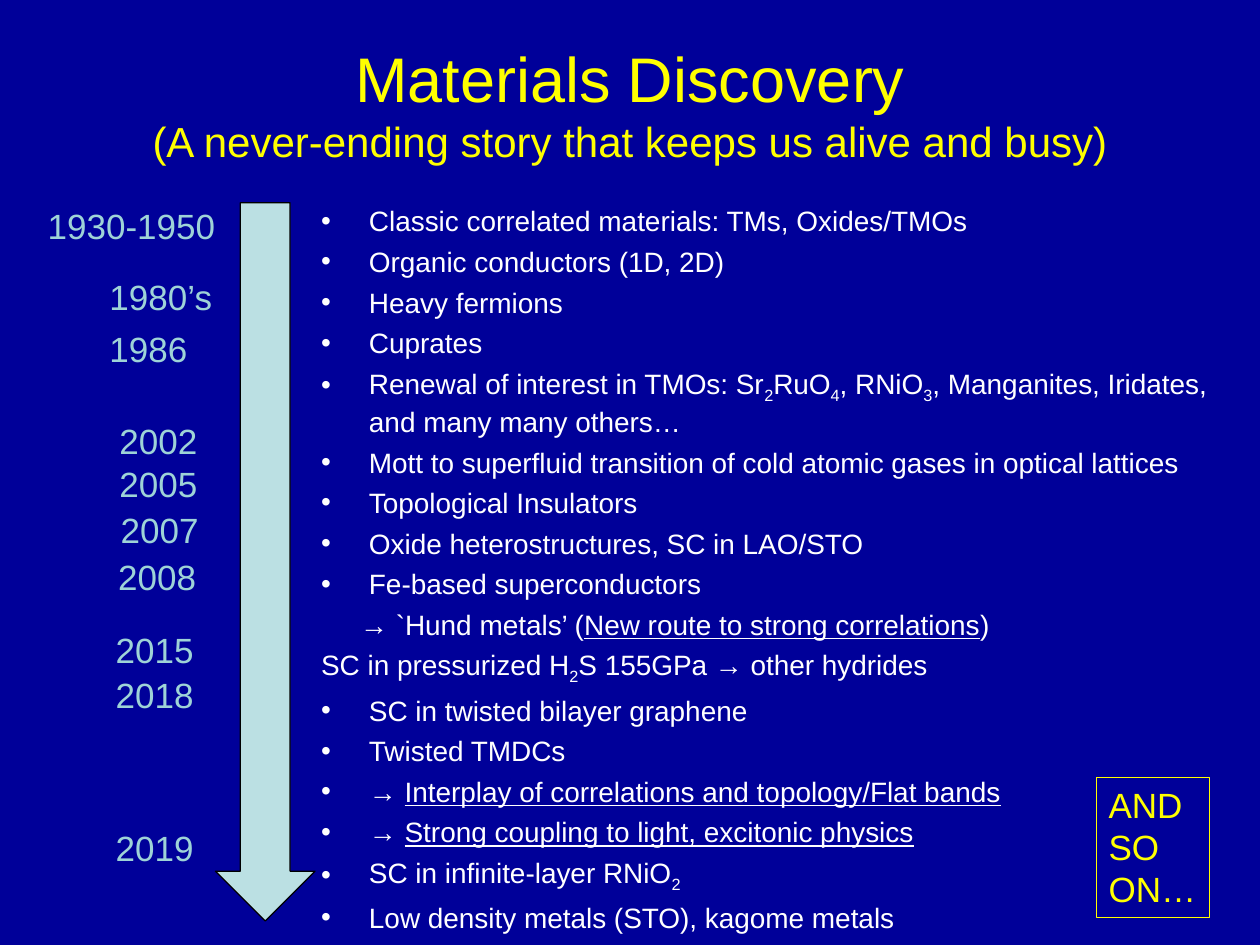
from lxml.etree import SubElement
from pptx import Presentation
from pptx.dml.color import RGBColor
from pptx.enum.shapes import MSO_SHAPE as Shape
from pptx.enum.text import MSO_ANCHOR as Anchor, MSO_AUTO_SIZE as AutoSize, PP_ALIGN as Align
from pptx.oxml.ns import qn
from pptx.util import Inches, Pt

NAVY = RGBColor(0x00, 0x00, 0x99)
YELLOW = RGBColor(0xFF, 0xFF, 0x00)
WHITE = RGBColor(0xFF, 0xFF, 0xFF)
BLACK = RGBColor(0x00, 0x00, 0x00)
PALE_TEAL = RGBColor(0xBB, 0xE0, 0xE3)
YEAR_TEAL = RGBColor(0x9E, 0xD3, 0xD7)

BULLET_INDENT = 0.38
SUBSCRIPT, UNDERLINE = "_", "*"

YEARS = [
    ("1930-1950", 0.28, 1.57, 1.54),
    ("1980’s", 0.77, 2.14, 1.02),
    ("1986", 0.77, 2.55, 0.83),
    ("2002", 0.85, 3.28, 0.83),
    ("2005", 0.85, 3.62, 0.83),
    ("2007", 0.86, 3.99, 0.83),
    ("2008", 0.84, 4.36, 0.83),
    ("2015", 0.82, 4.94, 0.83),
    ("2018", 0.82, 5.3, 0.83),
    ("2019", 0.82, 6.51, 0.83),
]

EARLY_DISCOVERIES = [
    "Classic correlated materials: TMs, Oxides/TMOs",
    "Organic conductors (1D, 2D)",
    "Heavy fermions",
    "Cuprates",
    "Renewal of interest in TMOs: Sr_2_RuO_4_, RNiO_3_, Manganites, Iridates, and many many others…",
    "Mott to superfluid transition of cold atomic gases in optical lattices",
    "Topological Insulators",
    "Oxide heterostructures, SC in LAO/STO",
    "Fe-based superconductors",
]
HUND_METALS = "→ `Hund metals’ (*New route to strong correlations*)"
HYDRIDES = "SC in pressurized H_2_S 155GPa → other hydrides"
RECENT_DISCOVERIES = [
    "SC in twisted bilayer graphene",
    "Twisted TMDCs",
    "→ *Interplay of correlations and topology/Flat bands*",
    "→ *Strong coupling to light, excitonic physics*",
    "SC in infinite-layer RNiO_2_",
    "Low density metals (STO), kagome metals",
]


def write_paragraph(frame, text, size, color, align=Align.LEFT, before=0, margin=0, bullet=False):
    first = frame.paragraphs[0]
    paragraph = frame.add_paragraph() if first.runs else first
    paragraph.alignment = align
    paragraph.space_before = Pt(before)
    properties = paragraph._p.get_or_add_pPr()
    properties.set("marL", str(Inches(margin)))
    properties.set("indent", str(-Inches(margin) if bullet else 0))
    if bullet:
        SubElement(properties, qn("a:buFont"), typeface="Arial")
        SubElement(properties, qn("a:buChar"), char="•")
    mark = UNDERLINE if UNDERLINE in text else SUBSCRIPT
    for position, piece in enumerate(text.split(mark)):
        if not piece:
            continue
        run = paragraph.add_run()
        run.text = piece
        run.font.name = "Arial"
        run.font.size = Pt(size)
        run.font.color.rgb = color
        if position % 2 and mark == UNDERLINE:
            run.font.underline = True
        elif position % 2:
            run.font._element.set("baseline", "-25000")


def add_text_frame(slide, left, top, width, height, wrap=True):
    box = slide.shapes.add_textbox(Inches(left), Inches(top), Inches(width), Inches(height))
    frame = box.text_frame
    frame.word_wrap = wrap
    frame.auto_size = AutoSize.NONE if wrap else AutoSize.SHAPE_TO_FIT_TEXT
    return frame


def add_outlined_shape(slide, preset, left, top, width, height, line_color, fill_color=None):
    shape = slide.shapes.add_shape(preset, Inches(left), Inches(top), Inches(width), Inches(height))
    shape.shadow.inherit = False
    if fill_color is None:
        shape.fill.background()
    else:
        shape.fill.solid()
        shape.fill.fore_color.rgb = fill_color
    shape.line.color.rgb = line_color
    shape.line.width = Pt(0.75)
    return shape


def add_title(slide):
    title = add_text_frame(slide, 0.5, 0.19, 9, 1.25)
    title.vertical_anchor = Anchor.MIDDLE
    write_paragraph(title, "Materials Discovery", 36, YELLOW, align=Align.CENTER)
    write_paragraph(title, "(A never-ending story that keeps us alive and busy)", 24, YELLOW,
                    align=Align.CENTER)


def add_discoveries(slide):
    discoveries = add_text_frame(slide, 2.45, 1.57, 7.42, 5.74)
    style = {"size": 16, "color": WHITE, "before": 4}
    bulleted = {**style, "margin": BULLET_INDENT, "bullet": True}
    for discovery in EARLY_DISCOVERIES:
        write_paragraph(discoveries, discovery, **bulleted)
    write_paragraph(discoveries, HUND_METALS, margin=0.31, **style)
    write_paragraph(discoveries, HYDRIDES, **style)
    for discovery in RECENT_DISCOVERIES:
        write_paragraph(discoveries, discovery, **bulleted)


def add_timeline(slide):
    add_outlined_shape(slide, Shape.DOWN_ARROW, 1.71, 1.61, 0.79, 5.7, BLACK, PALE_TEAL)
    for year, left, top, width in YEARS:
        label = add_text_frame(slide, left, top, width, 0.44, wrap=False)
        write_paragraph(label, year, 20, YEAR_TEAL)


def add_closing_note(slide):
    note = add_outlined_shape(slide, Shape.RECTANGLE, 8.7, 6.17, 0.9, 1.11, YELLOW).text_frame
    note.word_wrap = False
    note.auto_size = AutoSize.SHAPE_TO_FIT_TEXT
    note.vertical_anchor = Anchor.TOP
    for word in ("AND", "SO", "ON…"):
        write_paragraph(note, word, 20, YELLOW)


def main():
    deck = Presentation()
    deck.slide_width, deck.slide_height = Inches(10), Inches(7.5)
    slide = deck.slides.add_slide(deck.slide_layouts[6])
    slide.background.fill.solid()
    slide.background.fill.fore_color.rgb = NAVY
    add_title(slide)
    add_discoveries(slide)
    add_timeline(slide)
    add_closing_note(slide)
    deck.save("out.pptx")


if __name__ == "__main__":
    main()
